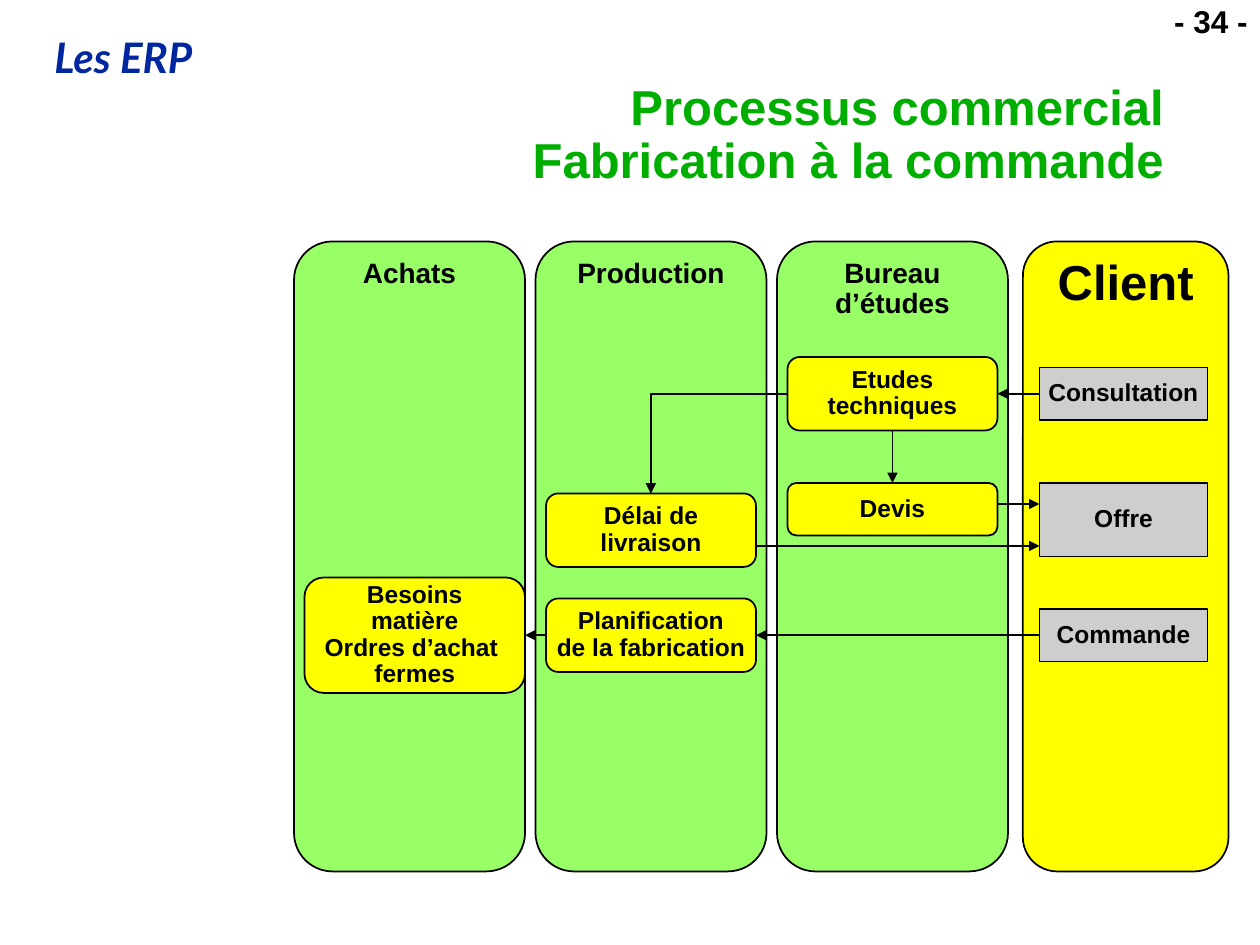
from dataclasses import dataclass

from lxml.etree import SubElement
from pptx import Presentation
from pptx.dml.color import RGBColor
from pptx.enum.shapes import MSO_CONNECTOR, MSO_SHAPE
from pptx.enum.text import MSO_ANCHOR, PP_ALIGN
from pptx.oxml.ns import qn
from pptx.util import Pt


@dataclass(frozen=True)
class Theme:
    font: str = "Arial"
    brand_font: str = "Lato"
    black: str = "000000"
    blue: str = "00279F"
    green: str = "00AE00"
    lane: str = "99FF66"
    yellow: str = "FFFF00"
    grey: str = "CECECE"
    title: int = 28
    brand: int = 24
    number: int = 18
    heading: int = 16
    body: int = 14
    line: int = 1
    spacing: float = 0.9


class Page:
    """Draws the elements of one slide in a common style."""

    def __init__(self, deck, theme):
        self.theme = theme
        self.slide = deck.slides.add_slide(deck.slide_layouts[6])

    def fill_text(self, shape, paragraphs, size, color, align, anchor, font=None, italic=None):
        frame = shape.text_frame
        frame.vertical_anchor = anchor
        for index, text in enumerate(paragraphs):
            para = frame.add_paragraph() if index else frame.paragraphs[0]
            para.alignment = align
            para.line_spacing = self.theme.spacing
            for row, words in enumerate(text.split("\n")):
                if row:
                    para.add_line_break()
                span = para.add_run()
                span.text = words
                span.font.name = font or self.theme.font
                span.font.size = Pt(size)
                span.font.bold = True
                span.font.italic = italic
                span.font.color.rgb = RGBColor.from_string(color)

    def label(self, bounds, text, size, color, align=PP_ALIGN.RIGHT,
              anchor=MSO_ANCHOR.TOP, font=None, italic=None):
        box = self.slide.shapes.add_textbox(*map(Pt, bounds))
        box.text_frame.word_wrap = True
        self.fill_text(box, [text], size, color, align, anchor, font, italic)

    def block(self, bounds, paragraphs, fill, size=None,
              kind=MSO_SHAPE.ROUNDED_RECTANGLE, anchor=MSO_ANCHOR.MIDDLE):
        box = self.slide.shapes.add_shape(kind, *map(Pt, bounds))
        box.shadow.inherit = False
        box.fill.solid()
        box.fill.fore_color.rgb = RGBColor.from_string(fill)
        box.line.color.rgb = RGBColor.from_string(self.theme.black)
        box.line.width = Pt(self.theme.line)
        box.text_frame.word_wrap = False
        self.fill_text(box, paragraphs, size or self.theme.body, self.theme.black,
                       PP_ALIGN.CENTER, anchor)

    def lane(self, left, width, text, fill, size):
        self.block((left, 138, width, 360), [text], fill, size, anchor=MSO_ANCHOR.TOP)

    def arrow(self, start, end, bent=False):
        kind = MSO_CONNECTOR.ELBOW if bent else MSO_CONNECTOR.STRAIGHT
        link = self.slide.shapes.add_connector(kind, *map(Pt, start + end))
        link.line.color.rgb = RGBColor.from_string(self.theme.black)
        link.line.width = Pt(self.theme.line)
        properties = link._element.spPr
        if bent:
            properties.find(qn("a:prstGeom")).set("prst", "bentConnector2")
        SubElement(properties.find(qn("a:ln")), qn("a:tailEnd"), type="triangle")
        SubElement(properties, qn("a:effectLst"))


def main():
    deck = Presentation()
    deck.slide_width, deck.slide_height = Pt(720), Pt(540)
    theme = Theme()
    page = Page(deck, theme)

    page.label((24, 18, 582, 33), "Les ERP", theme.brand, theme.blue,
               PP_ALIGN.LEFT, font=theme.brand_font, italic=True)
    page.label((654, 0, 66, 27), "- 34 -", theme.number, theme.black)
    page.label((102, 60, 570, 36), "Processus commercial\nFabrication à la commande",
               theme.title, theme.green, anchor=MSO_ANCHOR.MIDDLE)

    for column, text in enumerate(["Achats", "Production", "Bureau\nd’études"]):
        page.lane(168 + 138 * column, 132, text, theme.lane, theme.heading)
    page.lane(584.5, 117.5, "Client", theme.yellow, theme.title)

    steps = [
        ((450, 204, 120, 42), ["Etudes\ntechniques"]),
        ((450, 276, 120, 30), ["Devis"]),
        ((312, 282, 120, 42), ["Délai de\nlivraison"]),
        ((312, 342, 120, 42), ["Planification\nde la fabrication"]),
        ((174, 330, 126, 66), ["Besoins\nmatière", "Ordres d’achat \nfermes"]),
    ]
    for bounds, paragraphs in steps:
        page.block(bounds, paragraphs, theme.yellow)

    documents = [(210, 30, "Consultation"), (276, 42, "Offre"), (348, 30, "Commande")]
    for top, height, text in documents:
        page.block((594, top, 96, height), [text], theme.grey, kind=MSO_SHAPE.RECTANGLE)

    arrows = [
        ((594, 225), (570, 225)),
        ((510, 246), (510, 276)),
        ((570, 288), (594, 288)),
        ((432, 312), (594, 312)),
        ((594, 363), (432, 363)),
        ((312, 363), (300, 363)),
    ]
    for start, end in arrows:
        page.arrow(start, end)
    page.arrow((450, 225), (372, 282), bent=True)

    deck.save("out.pptx")


if __name__ == "__main__":
    main()
